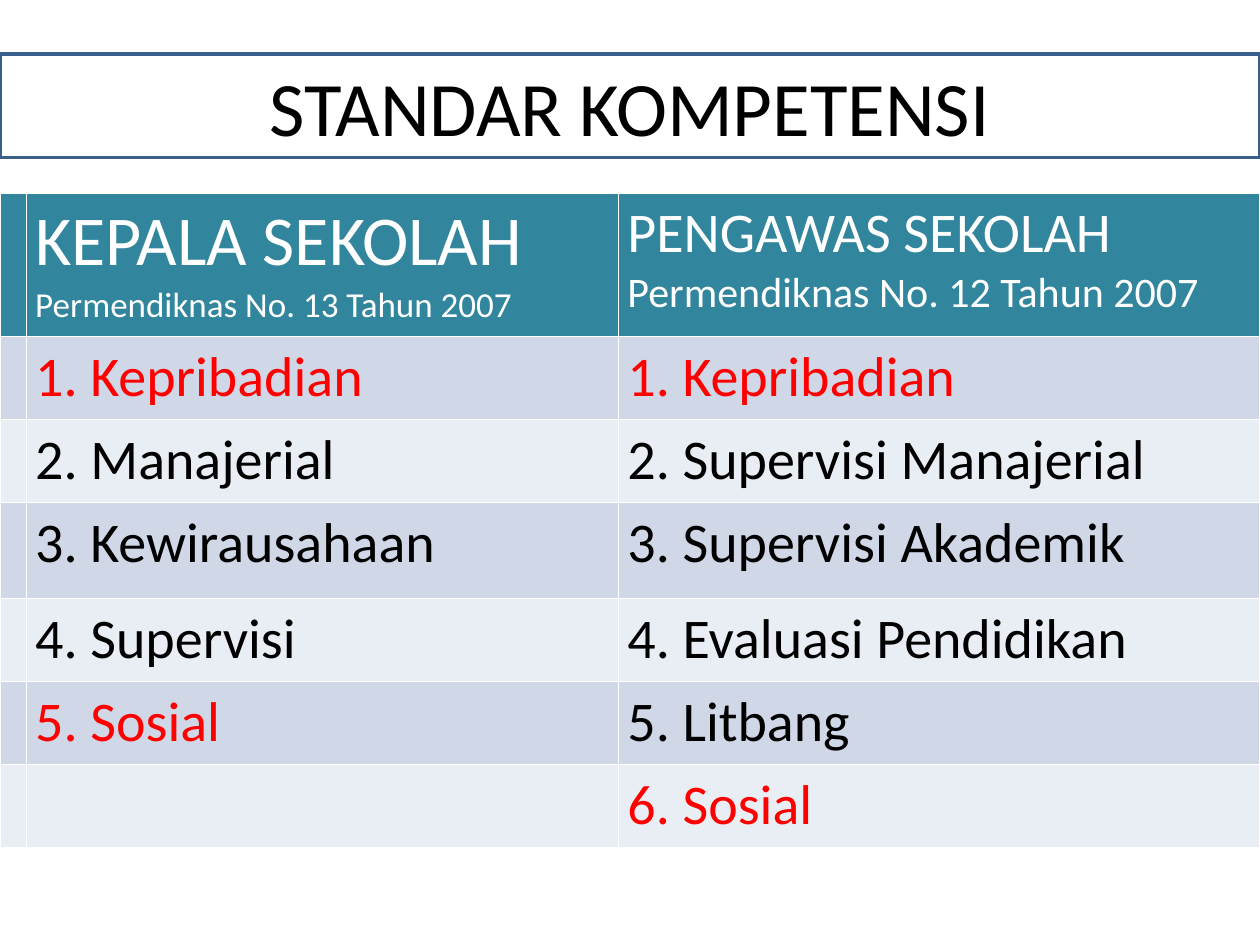
from lxml.etree import SubElement
from pptx import Presentation
from pptx.dml.color import RGBColor
from pptx.enum.text import MSO_ANCHOR, PP_ALIGN
from pptx.oxml.ns import qn
from pptx.util import Inches, Pt

WHITE = RGBColor(0xFF, 0xFF, 0xFF)
BLACK = RGBColor(0x00, 0x00, 0x00)
RED = RGBColor(0xFF, 0x00, 0x00)
TEAL = RGBColor(0x31, 0x85, 0x9C)
NAVY = RGBColor(0x3A, 0x5F, 0x8C)
BANDS = (RGBColor(0xE9, 0xED, 0xF4), RGBColor(0xD0, 0xD8, 0xE8))

HEADERS = [
    [],
    [("KEPALA SEKOLAH", 40), ("Permendiknas No. 13 Tahun 2007", 20)],
    [("PENGAWAS SEKOLAH", 32), ("Permendiknas No. 12 Tahun 2007", 24)],
]
PRINCIPAL = ["Kepribadian", "Manajerial", "Kewirausahaan", "Supervisi", "Sosial"]
SUPERVISOR = ["Kepribadian", "Supervisi Manajerial", "Supervisi Akademik",
              "Evaluasi Pendidikan", "Litbang", "Sosial"]
SHARED = {"Kepribadian", "Sosial"}
COLUMN_WIDTHS = [0.21, 4.7, 5.09]
ROW_HEIGHTS = [1.14, 0.66, 0.66, 0.76, 0.66, 0.66, 0.66]


class SlideBuilder:
    font_name = "Calibri"
    body_size = 32

    def __init__(self, deck):
        self.page = deck.slides.add_slide(deck.slide_layouts[5])

    def style(self, span, size, color):
        formats = {"name": self.font_name, "size": Pt(size), "bold": False}
        for name, value in formats.items():
            setattr(span.font, name, value)
        span.font.color.rgb = color

    def title(self, text, left, top, width, height):
        box = self.page.shapes.title
        places = {"left": left, "top": top, "width": width, "height": height}
        for name, value in places.items():
            setattr(box, name, Inches(value))
        box.fill.solid()
        box.fill.fore_color.rgb = WHITE
        box.line.color.rgb = NAVY
        box.line.width = Pt(2)
        box.text_frame.vertical_anchor = MSO_ANCHOR.MIDDLE
        para = box.text_frame.paragraphs[0]
        para.alignment = PP_ALIGN.CENTER
        span = para.add_run()
        span.text = text
        self.style(span, 44, BLACK)

    def table(self, left, top, column_widths, row_heights):
        frame = self.page.shapes.add_table(
            len(row_heights), len(column_widths), Inches(left), Inches(top),
            Inches(sum(column_widths)), Inches(sum(row_heights)))
        grid = frame.table
        for column, width in zip(grid.columns, column_widths):
            column.width = Inches(width)
        for row, height in zip(grid.rows, row_heights):
            row.height = Inches(height)
        return grid

    def cell(self, cell, lines, fill):
        margins = {"margin_left": 0.07, "margin_right": 0.07,
                   "margin_top": 0.05, "margin_bottom": 0.05}
        for name, value in margins.items():
            setattr(cell, name, Inches(value))
        self.borders(cell)
        cell.fill.solid()
        cell.fill.fore_color.rgb = fill
        for index, (text, size, color) in enumerate(lines):
            frame = cell.text_frame
            para = frame.add_paragraph() if index else frame.paragraphs[0]
            span = para.add_run()
            span.text = text
            self.style(span, size, color)

    def borders(self, cell):
        properties = cell._tc.get_or_add_tcPr()
        for side in ("L", "R", "T", "B"):
            line = SubElement(properties, qn(f"a:ln{side}"), w=str(Pt(1)))
            fill = SubElement(line, qn("a:solidFill"))
            SubElement(fill, qn("a:srgbClr"), val=str(WHITE))


def main():
    deck = Presentation()
    deck.slide_width, deck.slide_height = Inches(10), Inches(7.5)
    builder = SlideBuilder(deck)
    builder.title("STANDAR KOMPETENSI", 0, 0.43, 10, 0.82)
    grid = builder.table(0, 1.53, COLUMN_WIDTHS, ROW_HEIGHTS)
    for column, (header, names) in enumerate(zip(HEADERS, ([], PRINCIPAL, SUPERVISOR))):
        heading = [(text, size, WHITE) for text, size in header]
        builder.cell(grid.cell(0, column), heading, TEAL)
        for row in range(1, len(ROW_HEIGHTS)):
            lines = [(f"{row}. {name}", builder.body_size, RED if name in SHARED else BLACK)
                     for name in names[row - 1:row]]
            builder.cell(grid.cell(row, column), lines, BANDS[row % 2])
    deck.save("out.pptx")


if __name__ == "__main__":
    main()
